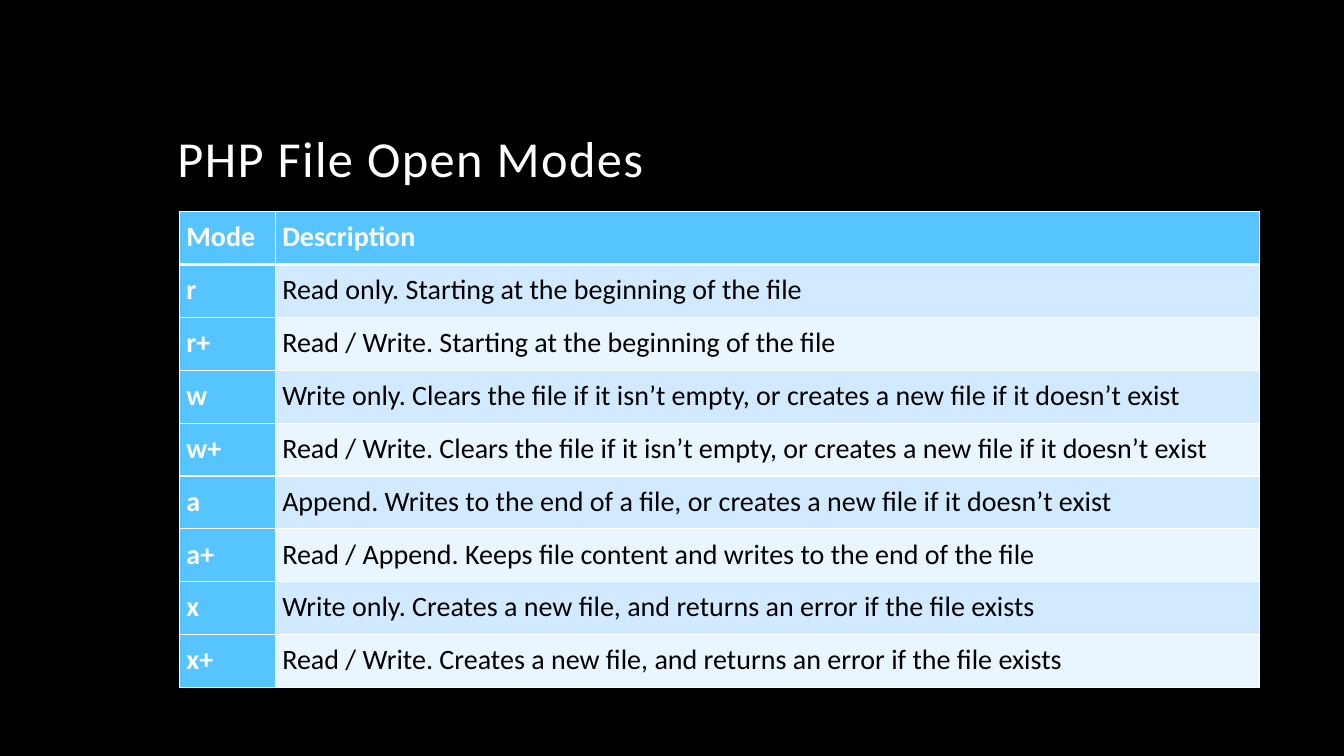
from lxml import etree
from pptx import Presentation
from pptx.dml.color import RGBColor
from pptx.enum.text import MSO_ANCHOR, MSO_AUTO_SIZE, PP_ALIGN
from pptx.oxml.ns import qn
from pptx.util import Pt

PX = 9144  # EMU per px, 100 px to the inch
LEFT, JUST = PP_ALIGN.LEFT, PP_ALIGN.JUSTIFY
TOP, BOTTOM = MSO_ANCHOR.TOP, MSO_ANCHOR.BOTTOM
FIXED = MSO_AUTO_SIZE.NONE

THEME = {
    "font": "Calibri", "title": 36, "body": 20, "thin": 1, "thick": 3,
    "back": "000000", "light": "FFFFFF", "dark": "000000",
    "head": "56C5FF", "bands": ["D1EAFF", "E9F5FF"],
}

MODES = [
    ("Mode", "Description"),
    ("r", "Read only. Starting at the beginning of the file"),
    ("r+", "Read / Write. Starting at the beginning of the file"),
    ("w", "Write only. Clears the file if it isn’t empty, or creates a new file if it doesn’t exist"),
    ("w+", "Read / Write. Clears the file if it isn’t empty, or creates a new file if it doesn’t exist"),
    ("a", "Append. Writes to the end of a file, or creates a new file if it doesn’t exist"),
    ("a+", "Read / Append. Keeps file content and writes to the end of the file"),
    ("x", "Write only. Creates a new file, and returns an error if the file exists"),
    ("x+", "Read / Write. Creates a new file, and returns an error if the file exists"),
]


def write(frame, text, size, color, bold, align, space):
    para = frame.paragraphs[0]
    para.alignment, para.line_spacing = align, space
    run = para.add_run()
    run.text = text
    looks = {"name": THEME["font"], "size": Pt(size), "bold": bold}
    for key, value in looks.items():
        setattr(run.font, key, value)
    run.font.color.rgb = RGBColor.from_string(color)
    return run


def border(cell, side, width):
    props = cell._tc.get_or_add_tcPr()
    line = etree.SubElement(props, qn("a:ln" + side), w=str(Pt(width)))
    fill = etree.SubElement(line, qn("a:solidFill"))
    etree.SubElement(fill, qn("a:srgbClr"), val=THEME["light"])


# Slide
deck = Presentation()
deck.slide_width, deck.slide_height = 1333 * PX, 750 * PX
slide = deck.slides.add_slide(deck.slide_layouts[5])
slide.background.fill.solid()
slide.background.fill.fore_color.rgb = RGBColor.from_string(THEME["back"])

# Title
title = slide.shapes.title
place = {"left": 166, "top": 42, "width": 1000, "height": 150}
for key, value in place.items():
    setattr(title, key, value * PX)
frame = title.text_frame
for key, value in {"auto_size": FIXED, "word_wrap": True, "vertical_anchor": BOTTOM}.items():
    setattr(frame, key, value)
run = write(frame, "PHP File Open Modes", THEME["title"], THEME["light"], False, LEFT, 0.9)
run._r.get_or_add_rPr().set("spc", "100")

# Table of modes
table = slide.shapes.add_table(len(MODES), 2, 178 * PX, 210 * PX, 1071 * PX, 472 * PX).table
table.first_col = True
for col, width in zip(table.columns, (95, 976)):
    col.width = width * PX

inset = {"margin_left": 7 * PX, "margin_right": 7 * PX, "margin_top": 0,
         "margin_bottom": 0, "vertical_anchor": TOP}
for r, row in enumerate(MODES):
    for c, text in enumerate(row):
        cell = table.cell(r, c)
        for key, value in inset.items():
            setattr(cell, key, value)

        # Thick rule under the header row
        for side in "LRTB":
            rule = (r, side) in ((0, "B"), (1, "T"))
            border(cell, side, THEME["thick" if rule else "thin"])

        # Header row and column stand out from the banded body
        head = r == 0 or c == 0
        fill = THEME["head"] if head else THEME["bands"][(r - 1) % 2]
        cell.fill.solid()
        cell.fill.fore_color.rgb = RGBColor.from_string(fill)
        color = THEME["light" if head else "dark"]
        write(cell.text_frame, text, THEME["body"], color, head, JUST, 1.25)

deck.save("out.pptx")
